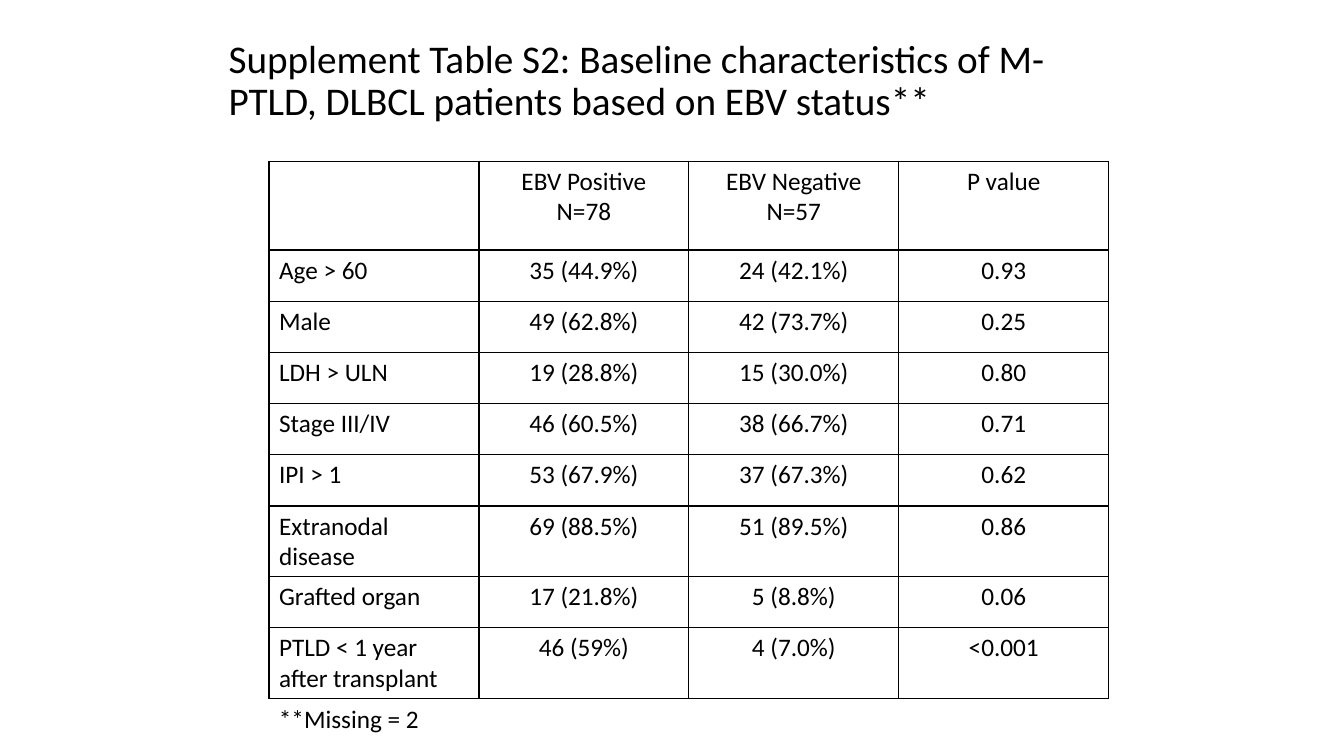
from dataclasses import dataclass

from lxml import etree
from pptx import Presentation
from pptx.dml.color import RGBColor
from pptx.enum.text import MSO_ANCHOR, PP_ALIGN
from pptx.oxml.ns import qn
from pptx.util import Cm, Pt

LEFT, CENTER = PP_ALIGN.LEFT, PP_ALIGN.CENTER
TOP, MIDDLE = MSO_ANCHOR.TOP, MSO_ANCHOR.MIDDLE

TITLE = ("Supplement Table S2: Baseline characteristics of M-PTLD, "
         "DLBCL patients based on EBV status**")
FOOTNOTE = "**Missing = 2"
CHARACTERISTICS = [
    ("", "EBV Positive\nN=78", "EBV Negative\nN=57", "P value"),
    ("Age > 60", "35 (44.9%)", "24 (42.1%)", "0.93"),
    ("Male", "49 (62.8%)", "42 (73.7%)", "0.25"),
    ("LDH > ULN", "19 (28.8%)", "15 (30.0%)", "0.80"),
    ("Stage III/IV", "46 (60.5%)", "38 (66.7%)", "0.71"),
    ("IPI > 1", "53 (67.9%)", "37 (67.3%)", "0.62"),
    ("Extranodal disease", "69 (88.5%)", "51 (89.5%)", "0.86"),
    ("Grafted organ", "17 (21.8%)", "5 (8.8%)", "0.06"),
    ("PTLD < 1 year after transplant", "46 (59%)", "4 (7.0%)", "<0.001"),
]


@dataclass(frozen=True)
class Theme:
    font: str = "Calibri"
    ink: str = "000000"
    title_size: int = 28
    body_size: int = 18
    border_width: int = 1


class SlideBuilder:
    def __init__(self, slide, theme):
        self.slide = slide
        self.theme = theme

    def add_lines(self, text_frame, text, size, alignment=LEFT, line_spacing=None):
        """Fill a text frame with one paragraph per line of text."""
        for index, line in enumerate(text.split("\n")):
            paragraph = text_frame.add_paragraph() if index else text_frame.paragraphs[0]
            paragraph.alignment = alignment
            paragraph.line_spacing = line_spacing
            run = paragraph.add_run()
            run.text = line
            run.font.name = self.theme.font
            run.font.size = Pt(size)
            run.font.color.rgb = RGBColor.from_string(self.theme.ink)

    def add_text(self, text, left, top, width, height, size, anchor=TOP, line_spacing=None):
        text_frame = self.slide.shapes.add_textbox(
            Cm(left), Cm(top), Cm(width), Cm(height)).text_frame
        text_frame.word_wrap = True
        text_frame.vertical_anchor = anchor
        self.add_lines(text_frame, text, size, line_spacing=line_spacing)

    def add_border(self, cell):
        properties = cell._tc.get_or_add_tcPr()
        for side in ("a:lnL", "a:lnR", "a:lnT", "a:lnB"):
            line = etree.SubElement(properties, qn(side), w=str(Pt(self.theme.border_width)))
            fill = etree.SubElement(line, qn("a:solidFill"))
            etree.SubElement(fill, qn("a:srgbClr"), val=self.theme.ink)

    def add_table(self, rows, left, top, column_width, header_height, row_height):
        column_count = len(rows[0])
        height = header_height + row_height * (len(rows) - 1)
        table = self.slide.shapes.add_table(
            len(rows), column_count, Cm(left), Cm(top),
            Cm(column_width * column_count), Cm(height)).table
        table.first_row = table.horz_banding = False
        for row_index, values in enumerate(rows):
            table.rows[row_index].height = Cm(row_height if row_index else header_height)
            for column_index, value in enumerate(values):
                cell = table.cell(row_index, column_index)
                self.add_border(cell)
                cell.fill.background()
                if value:
                    self.add_lines(cell.text_frame, value, self.theme.body_size,
                                   CENTER if column_index else LEFT)


def main():
    presentation = Presentation()
    presentation.slide_width, presentation.slide_height = Cm(33.87), Cm(19.05)
    theme = Theme()
    builder = SlideBuilder(presentation.slides.add_slide(presentation.slide_layouts[6]), theme)
    builder.add_text(TITLE, 5.51, 0.76, 22.86, 2.62, theme.title_size, MIDDLE, 0.9)
    builder.add_table(CHARACTERISTICS, left=6.78, top=4.06, column_width=5.29,
                      header_height=2.24, row_height=1.29)
    builder.add_text(FOOTNOTE, 6.78, 17.6, 13.13, 1.02, theme.body_size)
    presentation.save("out.pptx")


if __name__ == "__main__":
    main()
